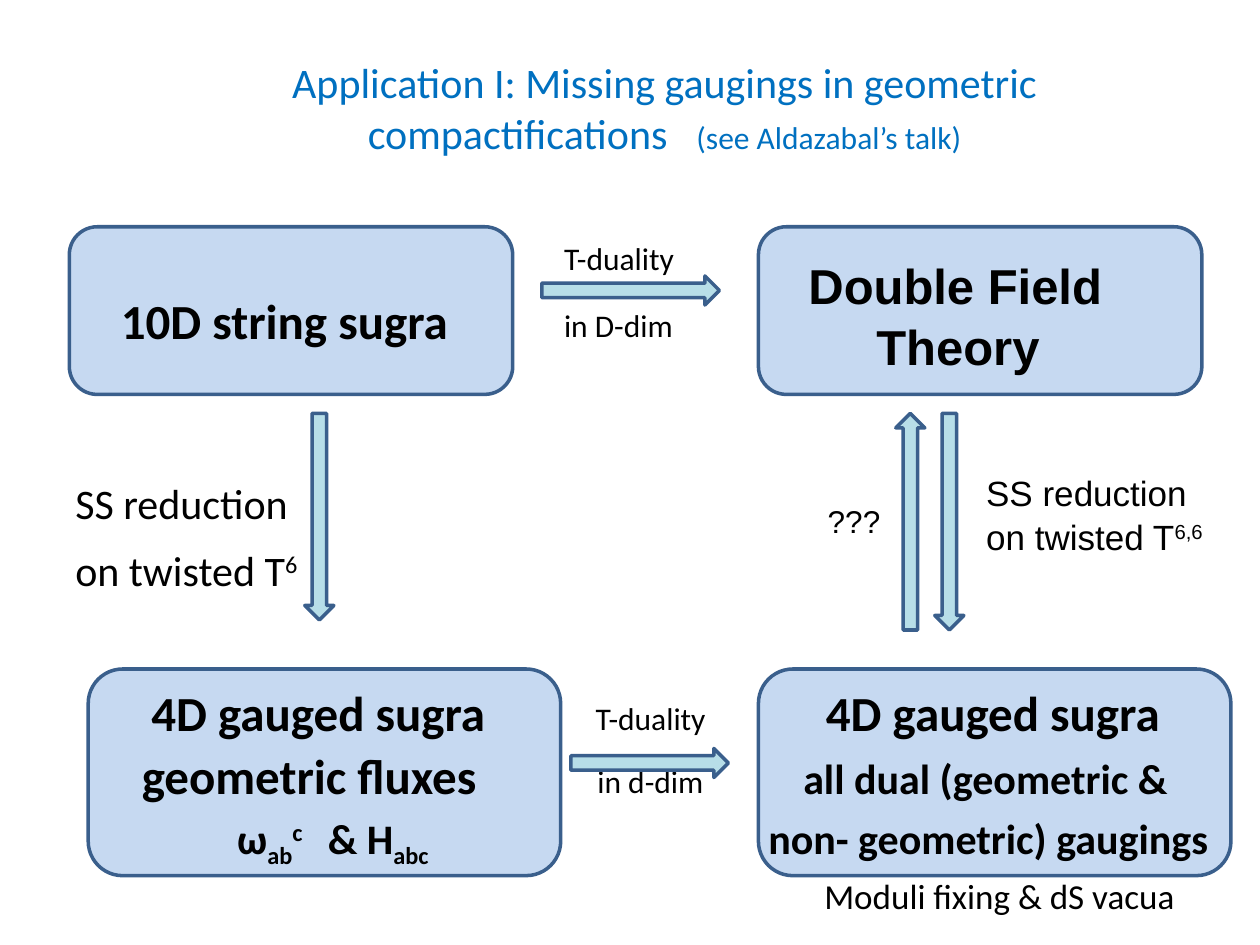
from pptx import Presentation
from pptx.dml.color import RGBColor
from pptx.enum.shapes import MSO_SHAPE
from pptx.enum.text import PP_ALIGN
from pptx.util import Pt

ROUNDED = MSO_SHAPE.ROUNDED_RECTANGLE
RIGHT = MSO_SHAPE.RIGHT_ARROW
DOWN = MSO_SHAPE.DOWN_ARROW
UP = MSO_SHAPE.UP_ARROW
CENTER = PP_ALIGN.CENTER
BOX_FILL, ARROW_FILL, OUTLINE = "C6D9F1", "B7DEE8", "3A5F8C"
BLACK, BLUE = "000000", "0070C0"


def color(code):
    return RGBColor.from_string(code)


def write(para, text, size=18, font="Calibri", bold=False, code=BLACK, baseline=0, spacing=0):
    span = para.add_run()
    span.text = text
    span.font.size = Pt(size)
    span.font.name = font
    span.font.bold = bold
    span.font.color.rgb = color(code)
    properties = span.font._element
    if baseline:
        properties.set("baseline", str(baseline * 1000))
    if spacing:
        properties.set("spc", str(spacing * 100))


deck = Presentation()
deck.slide_width, deck.slide_height = Pt(720), Pt(540)
page = deck.slides.add_slide(deck.slide_layouts[6])

theory_boxes = [
    (ROUNDED, BOX_FILL, 39.6, 129.6, 253.4, 95.8),
    (ROUNDED, BOX_FILL, 433.4, 129.6, 253.4, 95.8),
    (ROUNDED, BOX_FILL, 50.4, 382.3, 270, 118.1),
    (ROUNDED, BOX_FILL, 433.4, 382.3, 270, 118.1),
]
arrows = [
    (RIGHT, ARROW_FILL, 309.6, 157.7, 101.5, 16.6),
    (RIGHT, ARROW_FILL, 326.2, 427.7, 90, 16.6),
    (DOWN, ARROW_FILL, 174.2, 236.2, 16.6, 118.1),
    (DOWN, ARROW_FILL, 534.2, 236.2, 16.6, 123.8),
    (UP, ARROW_FILL, 511.9, 236.2, 16.6, 123.8),
]

large = {"size": 28, "bold": True}
medium = {"size": 24, "bold": True}
lower = {**medium, "baseline": -25}
upper = {**medium, "baseline": 30}
heading = {"size": 28, "bold": True, "font": "Arial"}
plain = {"size": 24}
arial = {"size": 20, "font": "Arial"}
title = {"size": 24, "code": BLUE}

blocks = [
    (159.1, 32.4, 441.4, 58, CENTER, [
        (0, 0, [("Application I: Missing gaugings in geometric compactifications", title),
                (" ", {**title, "spacing": 11}),
                ("(see Aldazabal’s talk)", {"code": BLUE})]),
    ]),
    (69.1, 165.9, 210, 35, None, [(0, 0, [("10D string sugra", large)])]),
    (462, 146, 190, 67, None, [
        (0, 0, [("Double Field", heading)]),
        (38.8, 1.5, [("Theory", heading)]),
    ]),
    (322.3, 136.6, 90, 62, None, [
        (0, 0, [("T-duality", {})]),
        (0, 16.9, [("in D-dim", {})]),
    ]),
    (340.4, 399.5, 80, 60, None, [
        (0, 0, [("T-duality", {})]),
        (1, 14.5, [("in d-dim", {})]),
    ]),
    (43, 272.6, 140, 70, None, [
        (0, 0, [("SS reduction", plain)]),
        (0, 9.6, [("on twisted T", plain), ("6", {**plain, "baseline": 30})]),
    ]),
    (563.5, 269.3, 140, 48, None, [
        (0, 0, [("SS reduction", arial)]),
        (0, 1, [("on twisted T", arial), ("6,6", {**arial, "baseline": 30})]),
    ]),
    (473, 286.6, 38, 22, None, [(0, 0, [("???", {"font": "Arial"})])]),
    (81, 390, 220, 105, None, [
        (5.5, 0, [("4D gauged sugra", large)]),
        (0, 2.3, [("geometric fluxes", large)]),
        (54.5, 4.5, [("ω", medium), ("ab", lower), ("c", upper),
                     (" ", {**medium, "spacing": 9}), ("& H", medium), ("abc", lower)]),
    ]),
    (439, 390, 262, 105, None, [
        (33, 0, [("4D gauged sugra", large)]),
        (20, 6.2, [("all dual (geometric &", medium)]),
        (0, 5.6, [("non- geometric) gaugings", medium)]),
    ]),
    (471, 499.9, 215, 25, None, [(0, 0, [("Moduli fixing & dS vacua", {"size": 20})])]),
]

for index, (kind, fill, left, top, width, height) in enumerate(theory_boxes + arrows):
    if index == len(theory_boxes):
        for text_left, text_top, text_width, text_height, alignment, lines in blocks:
            box = page.shapes.add_textbox(Pt(text_left), Pt(text_top), Pt(text_width), Pt(text_height))
            frame = box.text_frame
            frame.word_wrap = True
            frame.margin_left = frame.margin_right = frame.margin_top = frame.margin_bottom = 0
            for number, (indent, before, spans) in enumerate(lines):
                para = frame.add_paragraph() if number else frame.paragraphs[0]
                para.alignment = alignment
                para.space_before = Pt(before)
                if indent:
                    para._p.get_or_add_pPr().set("marL", str(Pt(indent)))
                for text, look in spans:
                    write(para, text, **look)
    shape = page.shapes.add_shape(kind, Pt(left), Pt(top), Pt(width), Pt(height))
    shape.shadow.inherit = False
    shape.fill.solid()
    shape.fill.fore_color.rgb = color(fill)
    shape.line.color.rgb = color(OUTLINE)
    shape.line.width = Pt(2)

deck.save("out.pptx")
